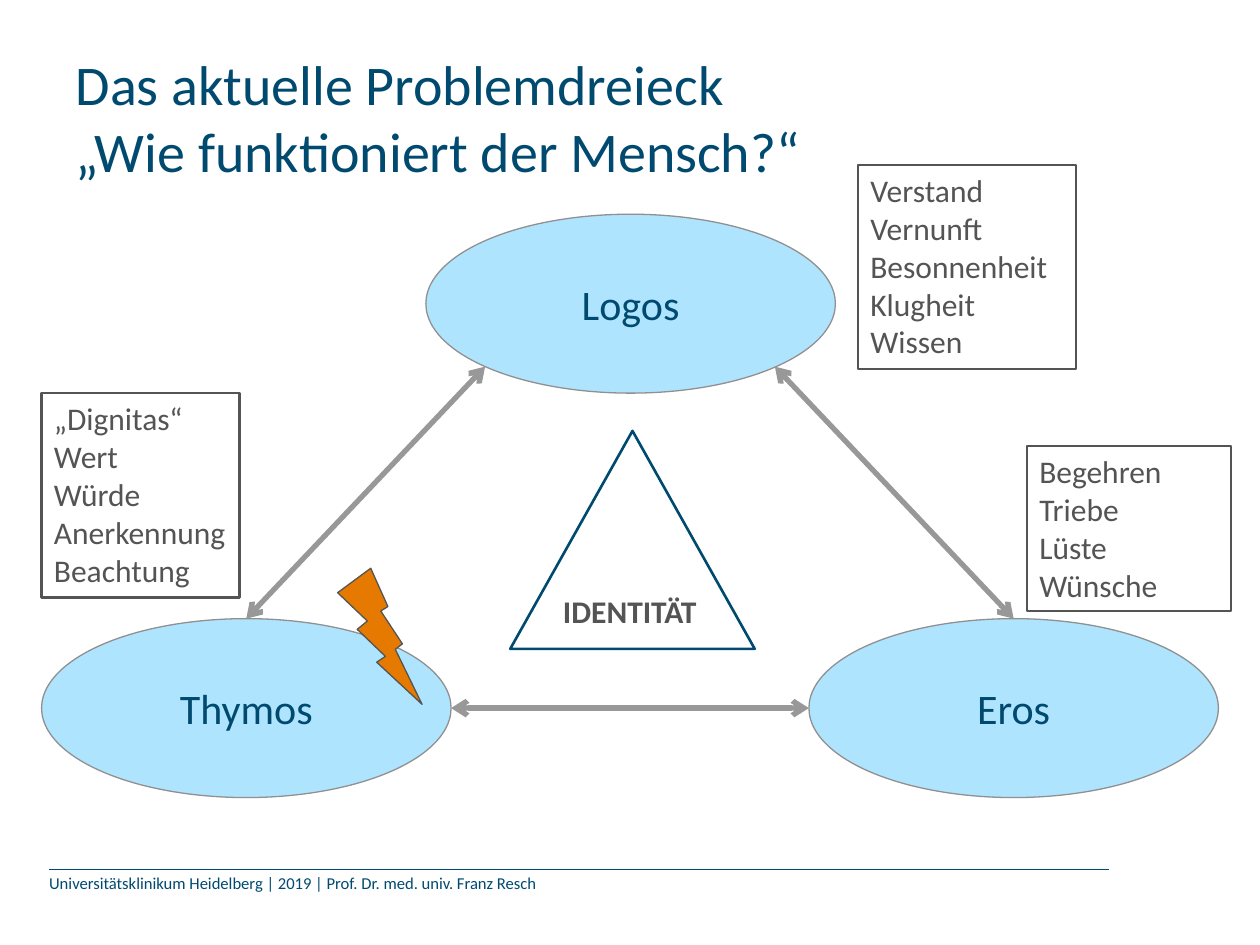
"""Build the slide on the problem triangle of Logos, Thymos and Eros."""
from dataclasses import dataclass

from lxml import etree
from pptx import Presentation
from pptx import util as u
from pptx.dml.color import RGBColor
from pptx.enum import shapes, text
from pptx.oxml import ns

FONT = "Calibri"
NAVY, GREY, SKY = "004A6F", "545455", "AFE4FF"
ORANGE, OUTLINE, ARROW = "E67900", "909091", "989899"
OVAL_W, OVAL_H = 3.25, 1.42
SHAPE = shapes.MSO_SHAPE


@dataclass
class Pole:
    name: str
    left: float
    top: float


@dataclass
class Box:
    left: float
    top: float
    width: float
    height: float
    words: list[str]


POLES = [Pole("Logos", 3.38, 1.7), Pole("Thymos", 0.33, 4.91), Pole("Eros", 6.42, 4.91)]
BOXES = [
    Box(0.33, 3.12, 1.57, 1.62, ["„Dignitas“", "Wert", "Würde", "Anerkennung", "Beachtung"]),
    Box(6.81, 1.31, 1.73, 1.62, ["Verstand", "Vernunft", "Besonnenheit", "Klugheit", "Wissen"]),
    Box(8.15, 3.54, 1.62, 1.31, ["Begehren", "Triebe", "Lüste", "Wünsche"]),
]


def rgb(value: str) -> RGBColor:
    """Turn a hex string into a colour."""
    return RGBColor.from_string(value)


def inches(*values: float) -> list[u.Length]:
    """Convert numbers to lengths in inches."""
    return [u.Inches(v) for v in values]


def add_run(p, words: str, size: float, color: str, bold: bool = False) -> None:
    """Append one formatted run to a paragraph."""
    r = p.add_run()
    r.text = words
    r.font.name, r.font.size, r.font.bold = FONT, u.Pt(size), bold
    r.font.color.rgb = rgb(color)


def add_figure(s, kind, at: tuple, line: str, width: float, fill: str | None = None):
    """Add a preset shape with its outline and optional fill."""
    sp = s.shapes.add_shape(kind, *inches(*at))
    sp.shadow.inherit = False
    sp.line.color.rgb = rgb(line)
    sp.line.width = u.Pt(width)
    if fill:
        sp.fill.solid()
        sp.fill.fore_color.rgb = rgb(fill)
    else:
        sp.fill.background()
    return sp


def add_pole(s, pole: Pole):
    """Add one labelled ellipse."""
    sp = add_figure(s, SHAPE.OVAL, (pole.left, pole.top, OVAL_W, OVAL_H), OUTLINE, 0.75, SKY)
    sp.text_frame.vertical_anchor = text.MSO_ANCHOR.MIDDLE
    p = sp.text_frame.paragraphs[0]
    p.alignment = text.PP_ALIGN.CENTER
    add_run(p, pole.name, 24, NAVY)
    return sp


def add_box(s, box: Box) -> None:
    """Add an outlined box with one word per paragraph."""
    at = (box.left, box.top, box.width, box.height)
    tf = add_figure(s, SHAPE.RECTANGLE, at, GREY, 1.5).text_frame
    tf.vertical_anchor = text.MSO_ANCHOR.TOP
    for i, word in enumerate(box.words):
        p = tf.add_paragraph() if i else tf.paragraphs[0]
        p.alignment = text.PP_ALIGN.LEFT
        add_run(p, word, 18, GREY)


def add_line(s, points: tuple, color: str, width: float, arrows: bool = False):
    """Add a straight line, with arrowheads at both ends if asked."""
    c = s.shapes.add_connector(shapes.MSO_CONNECTOR.STRAIGHT, *inches(*points))
    c.line.color.rgb = rgb(color)
    c.line.width = u.Pt(width)
    if arrows:
        for end in ("a:headEnd", "a:tailEnd"):
            etree.SubElement(c.line._get_or_add_ln(), ns.qn(end), type="arrow")
    etree.SubElement(c._element.spPr, ns.qn("a:effectLst"))
    return c


def add_text(s, at: tuple, words: str, size: float, color: str, bold: bool = False):
    """Add a wrapped one-line text box."""
    tf = s.shapes.add_textbox(*inches(*at)).text_frame
    tf.word_wrap = True
    add_run(tf.paragraphs[0], words, size, color, bold)
    return tf


def add_title(s, lines: list[str]) -> None:
    """Fill and place the title placeholder."""
    sp = s.shapes.title
    sp.left, sp.top, sp.width, sp.height = inches(0.5, 0.3, 9, 1.25)
    tf = sp.text_frame
    tf.auto_size = text.MSO_AUTO_SIZE.NONE
    tf.vertical_anchor = text.MSO_ANCHOR.MIDDLE
    p = tf.paragraphs[0]
    p.alignment = text.PP_ALIGN.LEFT
    for i, line in enumerate(lines):
        if i:
            p.add_line_break()
        add_run(p, line, 32, NAVY)


def main() -> None:
    """Build and save the slide."""
    prs = Presentation()
    prs.slide_width, prs.slide_height = inches(10, 7.5)
    s = prs.slides.add_slide(prs.slide_layouts[5])

    add_line(s, (0.39, 6.9, 8.8, 6.9), NAVY, 0.75)
    footer = "Universitätsklinikum Heidelberg | 2019 | Prof. Dr. med. univ. Franz Resch"
    tf = add_text(s, (0.39, 6.93, 7.87, 0.16), footer, 9.5, NAVY)
    tf.margin_left = tf.margin_top = tf.margin_right = tf.margin_bottom = 0

    add_title(s, ["Das aktuelle Problemdreieck", "„Wie funktioniert der Mensch?“"])
    logos, thymos, eros = [add_pole(s, pole) for pole in POLES]
    add_figure(s, SHAPE.LIGHTNING_BOLT, (2.68, 4.51, 0.67, 1.08), GREY, 0.75, ORANGE)

    for start, end, pole in ((3.85, 1.96, thymos), (6.15, 8.04, eros)):
        add_line(s, (start, 2.91, end, 4.91), ARROW, 3, True).end_connect(pole, 0)
    add_line(s, (3.58, 5.62, 6.42, 5.62), ARROW, 3, True)

    add_text(s, (4.37, 4.65, 3.04, 0.4), "IDENTITÄT", 18, GREY, True)
    add_figure(s, SHAPE.ISOSCELES_TRIANGLE, (4.05, 3.42, 1.94, 1.73), NAVY, 1.5)
    for box in BOXES:
        add_box(s, box)
    prs.save("out.pptx")


if __name__ == "__main__":
    main()
